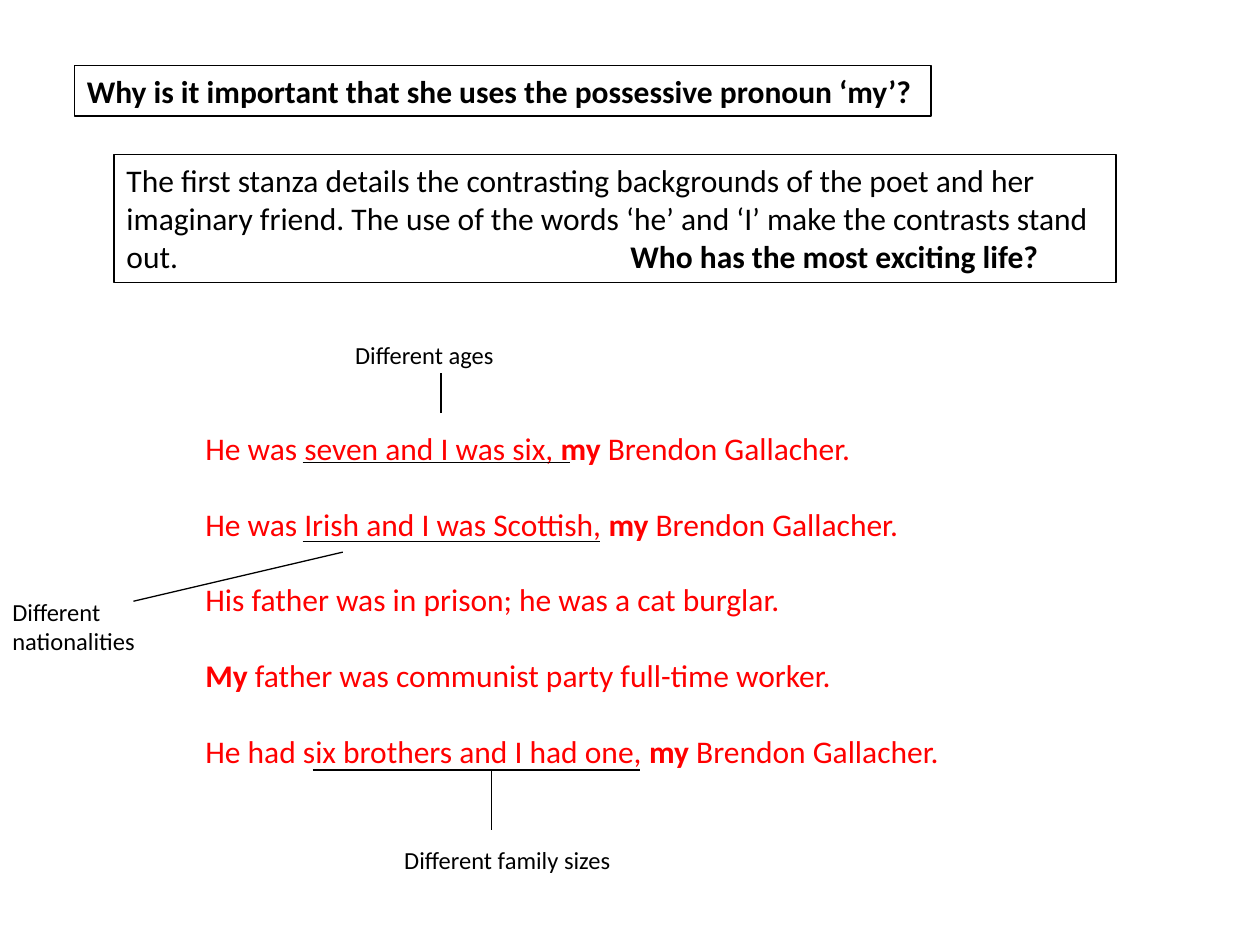
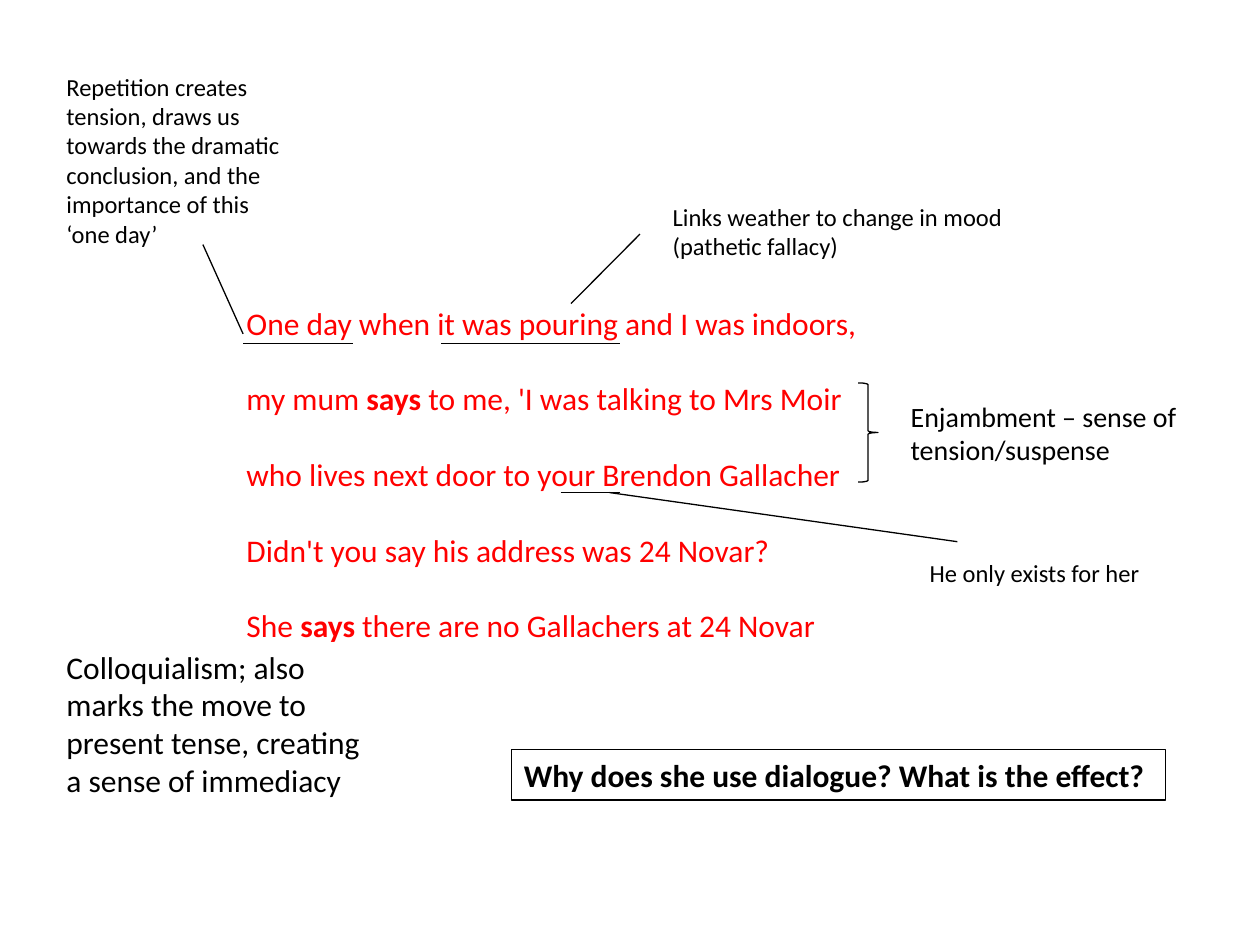
from lxml.etree import SubElement
from pptx import Presentation
from pptx.dml.color import RGBColor
from pptx.enum.shapes import MSO_CONNECTOR as Conn, MSO_SHAPE as Shape
from pptx.enum.text import MSO_ANCHOR as Anchor, PP_ALIGN as Align
from pptx.oxml import parse_xml
from pptx.oxml.ns import nsdecls, qn
from pptx.util import Cm, Pt

INK = "000000"
POEM = "FF0000"


def rgb(value):
    return RGBColor.from_string(value)


class Deck:
    font = "Calibri"
    line_width = Pt(0.75)
    verse_gap = Pt(21.6)

    def __init__(self):
        self.prs = Presentation()
        self.prs.slide_width, self.prs.slide_height = Cm(25.4), Cm(19.05)
        self.s = None

    def slide(self):
        self.s = self.prs.slides.add_slide(self.prs.slide_layouts[6])

    def fill_text(self, sp, paragraphs, size, color=INK, gap=0):
        tf = sp.text_frame
        tf.word_wrap = True
        tf.vertical_anchor = Anchor.TOP
        for i, text in enumerate(paragraphs):
            p = tf.add_paragraph() if i else tf.paragraphs[0]
            p.alignment = Align.LEFT
            if i:
                p.space_before = gap
            p.font.name = self.font
            p.font.size = Pt(size)
            p.font.color.rgb = rgb(color)
            for j, part in enumerate(text.split("*")):
                if part:
                    r = p.add_run()
                    r.text = part
                    r.font.bold = j % 2 == 1
        return tf

    def note(self, x, y, w, h, text, size=14):
        sp = self.s.shapes.add_textbox(Cm(x), Cm(y), Cm(w), Cm(h))
        self.fill_text(sp, [text], size)

    def poem(self, x, y, w, h, verses):
        sp = self.s.shapes.add_textbox(Cm(x), Cm(y), Cm(w), Cm(h))
        self.fill_text(sp, verses, 18, POEM, self.verse_gap)

    def outline(self, kind, x, y, w, h):
        sp = self.s.shapes.add_shape(kind, Cm(x), Cm(y), Cm(w), Cm(h))
        sp.shadow.inherit = False
        sp.fill.background()
        sp.line.color.rgb = rgb(INK)
        sp.line.width = self.line_width
        return sp

    def box(self, x, y, w, h, text, tab=None):
        sp = self.outline(Shape.RECTANGLE, x, y, w, h)
        tf = self.fill_text(sp, [text], 18)
        if tab:
            tabs = parse_xml(f'<a:tabLst {nsdecls("a")}><a:tab pos="{Cm(tab)}" algn="l"/></a:tabLst>')
            tf.paragraphs[0]._p.get_or_add_pPr().insert(0, tabs)

    def brace(self, x, y, w, h):
        self.outline(Shape.RIGHT_BRACE, x, y, w, h)

    def line(self, x1, y1, x2, y2):
        c = self.s.shapes.add_connector(Conn.STRAIGHT, Cm(x1), Cm(y1), Cm(x2), Cm(y2))
        c.line.color.rgb = rgb(INK)
        c.line.width = self.line_width
        SubElement(c._element.spPr, qn("a:effectLst"))

    def underline(self, x1, x2, y):
        self.line(x1, y, x2, y)


def contrasts(d):
    d.slide()
    d.poem(3.89, 8.53, 18, 7.11, [
        "He was seven and I was six, *my* Brendon Gallacher.",
        "He was Irish and I was Scottish, *my* Brendon Gallacher.",
        "His father was in prison; he was a cat burglar.",
        "*My* father was communist party full-time worker.",
        "He had six brothers and I had one, *my* Brendon Gallacher.",
    ])
    d.box(2.3, 3.12, 20.2, 2.57,
          "The first stanza details the contrasting backgrounds of the poet and her "
          "imaginary friend. The use of the words ‘he’ and ‘I’ make the contrasts "
          "stand out.\t*Who has the most exciting life?*", tab=10.16)
    d.underline(6.1, 11.5, 9.32)
    d.line(8.89, 8.33, 8.89, 7.52)
    d.note(6.91, 6.73, 5.79, 0.84, "Different ages")
    d.underline(6.1, 12.09, 10.92)
    d.line(6.91, 11.13, 2.69, 12.12)
    d.note(0, 11.91, 3.89, 1.45, "Different nationalities")
    d.underline(6.3, 12.9, 15.52)
    d.line(9.91, 15.52, 9.91, 16.74)
    d.note(7.9, 16.92, 5.21, 0.84, "Different family sizes")
    d.box(1.5, 1.32, 17.27, 1.02,
          "*Why is it important that she uses the possessive pronoun ‘my’?*")


def dialogue(d):
    d.slide()
    d.poem(4.72, 6, 13.49, 7.19, [
        "One day when it was pouring and I was indoors,",
        "my mum *says* to me, 'I was talking to Mrs Moir",
        "who lives next door to your Brendon Gallacher",
        "Didn't you say his address was 24 Novar?",
        "She *says* there are no Gallachers at 24 Novar",
    ])
    d.underline(4.9, 7.11, 6.93)
    d.line(4.9, 6.73, 4.09, 4.93)
    d.note(1.09, 1.32, 5, 3.84,
           "Repetition creates tension, draws us towards the dramatic conclusion, "
           "and the importance of this ‘one day’")
    d.underline(8.89, 12.5, 6.93)
    d.line(11.51, 6.12, 12.9, 4.72)
    d.note(13.31, 3.94, 8.41, 1.45, "Links weather to change in mood (pathetic fallacy)")
    d.underline(11.3, 12.5, 9.93)
    d.line(12.29, 9.93, 19.3, 10.92)
    d.note(18.49, 11.13, 5.99, 0.84, "He only exists for her")
    d.brace(17.3, 7.72, 0.4, 2)
    d.note(18.11, 7.92, 6.6, 1.63, "Enjambment – sense of tension/suspense", 16)
    d.box(10.31, 15.11, 13.18, 1.02, "*Why does she use dialogue? What is the effect?*")
    d.note(1.09, 12.93, 6.81, 3.33,
           "Colloquialism; also marks the move to present tense, "
           "creating a sense of immediacy", 18)


def main():
    d = Deck()
    contrasts(d)
    dialogue(d)
    d.prs.save("out.pptx")


if __name__ == "__main__":
    main()
